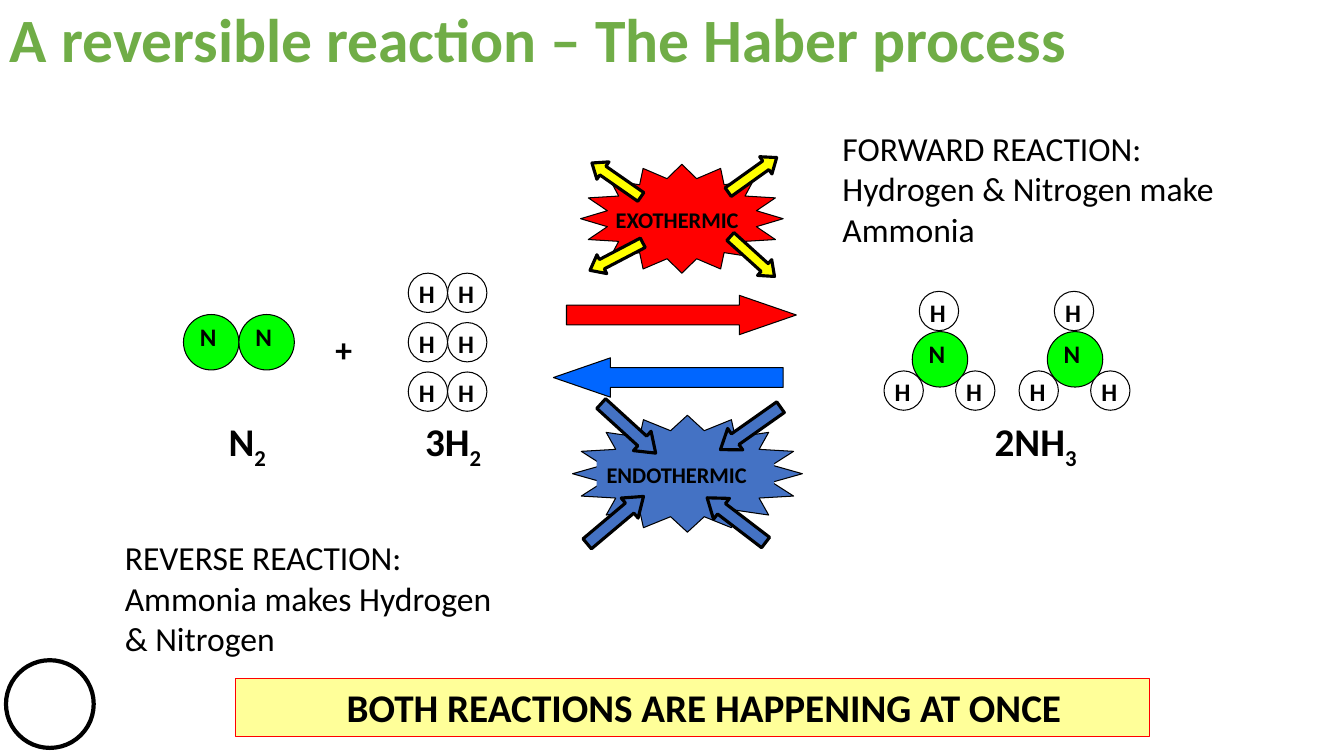
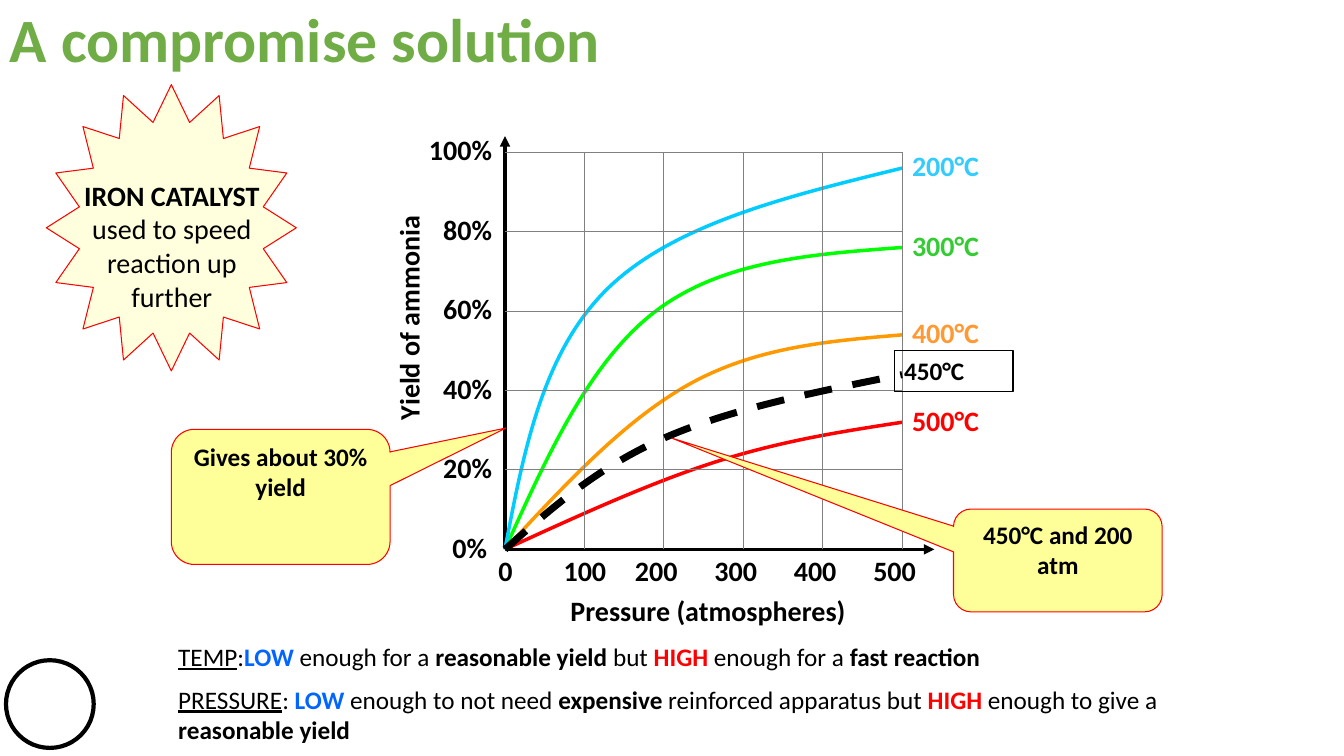
from lxml.etree import SubElement
from pptx import Presentation
from pptx.dml.color import RGBColor
from pptx.enum.dml import MSO_LINE
from pptx.enum.shapes import MSO_CONNECTOR, MSO_SHAPE
from pptx.enum.text import MSO_ANCHOR, PP_ALIGN
from pptx.oxml.ns import qn
from pptx.util import Inches, Pt

COLUMNS, ROWS = 40 / 3, 7.5
DECK_WIDTH, DECK_HEIGHT = Inches(COLUMNS), Inches(ROWS)
FONT = "Calibri"
COLORS = {
    "black": "000000", "white": "FFFFFF", "grey": "808080",
    "title": "70AD47", "red": "FF0000", "blue": "0066FF",
    "steel": "4472C4", "yellow": "FFFF00", "note": "FFFF99",
    "cream": "FFFFDD", "nitrogen": "00FF00",
    "curve 200": "00CCFF", "curve 300": "00FF00", "curve 400": "FF9900",
    "label 200": "33CCFF", "label 300": "33CC33", "label 400": "FF9933",
}

PLOT_LEFT, PLOT_BOTTOM, PLOT_SIDE = 5.01, 5.45, 3.94
MAX_PRESSURE, MAX_YIELD = 500, 100
LABEL_HEIGHT, LABEL_RISE = 0.43, 0.24
CURVES = [
    ((190, 60), (500, 76), "curve 300"),
    ((236, 42), (500, 54), "curve 400"),
    ((265, 22), (500, 32), "red"),
    ((131, 66), (500, 96), "curve 200"),
]
CURVE_LABELS = [
    ("200°C", 96, "label 200"),
    ("300°C", 76, "label 300"),
    ("400°C", 54, "label 400"),
    ("500°C", 32, "red"),
]

BOLD = {"bold": True}
UNDERLINED = {"underline": True}
LOW = ("LOW", {"bold": True, "color": "blue"})
HIGH = ("HIGH", {"bold": True, "color": "red"})
SUBSCRIPT = {"baseline": -25000}

ATOMS = {
    "N": {"side": 0.55, "fill": "nitrogen", "insets": (0, 0, 0.06, 0.11)},
    "H": {"side": 0.39, "fill": "white", "insets": (0, 0.02, 0.02, 0)},
}
AMMONIA_HYDROGENS = [(-0.28, 0.39), (0.43, 0.39), (0.07, -0.4)]


def col(count):
    return int(DECK_WIDTH * count / COLUMNS)


def row(count):
    return int(DECK_HEIGHT * count / ROWS)


def place(area):
    left, top, width, height = area
    return col(left), row(top), col(width), row(height)


def rgb(name):
    return RGBColor.from_string(COLORS[name])


def write(box, text, size=18, bold=False, color="black", align=PP_ALIGN.LEFT,
          anchor=MSO_ANCHOR.TOP, wrap=True, insets=(0.1, 0.05, 0.1, 0.05),
          gap=9, line_spacing=None):
    frame = box.text_frame
    frame.word_wrap = wrap
    frame.vertical_anchor = anchor
    frame.margin_left, frame.margin_top = col(insets[0]), row(insets[1])
    frame.margin_right, frame.margin_bottom = col(insets[2]), row(insets[3])
    paragraphs = [[(text, {})]] if isinstance(text, str) else text
    for index, spans in enumerate(paragraphs):
        para = frame.add_paragraph() if index else frame.paragraphs[0]
        para.alignment = align
        if index:
            para.space_before = Pt(gap)
        if line_spacing:
            para.line_spacing = line_spacing
        for words, style in spans:
            span = para.add_run()
            span.text = words
            span.font.name = FONT
            span.font.size = Pt(size)
            span.font.bold = style.get("bold", bold)
            span.font.underline = style.get("underline", False)
            span.font.color.rgb = rgb(style.get("color", color))
            if "baseline" in style:
                span.font._element.set("baseline", str(style["baseline"]))


def add_text(page, area, text, **text_format):
    box = page.shapes.add_textbox(*place(area))
    write(box, text, **text_format)
    return box


def add_box(page, kind, area, fill=None, line="black", weight=0.75,
            rotation=0, adjustments=()):
    box = page.shapes.add_shape(kind, *place(area))
    box.shadow.inherit = False
    box.rotation = rotation
    for index, value in enumerate(adjustments):
        box.adjustments[index] = value
    if fill:
        box.fill.solid()
        box.fill.fore_color.rgb = rgb(fill)
    else:
        box.fill.background()
    if line:
        box.line.color.rgb = rgb(line)
        box.line.width = Pt(weight)
    else:
        box.line.fill.background()
    return box


def add_line(page, start, end, color, weight, arrow=False):
    line = page.shapes.add_connector(
        MSO_CONNECTOR.STRAIGHT,
        col(start[0]), row(start[1]), col(end[0]), row(end[1]))
    line.line.color.rgb = rgb(color)
    line.line.width = Pt(weight)
    if arrow:
        SubElement(line.line._get_or_add_ln(), qn("a:tailEnd"), type="triangle")
    SubElement(line._element.spPr, qn("a:effectLst"))


def add_page(deck, title):
    page = deck.slides.add_slide(deck.slide_layouts[6])
    add_box(page, MSO_SHAPE.OVAL, (0.06, 6.55, 0.87, 0.87), "white", weight=3)
    add_text(page, (0, -0.2, 11.53, 1.25), title, size=44, bold=True,
             color="title", anchor=MSO_ANCHOR.MIDDLE, line_spacing=0.9)
    return page


def add_atom(page, symbol, left, top):
    atom = ATOMS[symbol]
    box = add_box(page, MSO_SHAPE.OVAL,
                  (left, top, atom["side"], atom["side"]), atom["fill"])
    write(box, symbol, bold=True, align=PP_ALIGN.CENTER, wrap=False,
          anchor=MSO_ANCHOR.MIDDLE, insets=atom["insets"])


def add_pair(page, symbol, left, top):
    for index in range(2):
        add_atom(page, symbol, left + index * ATOMS[symbol]["side"], top)


def add_ammonia(page, left, top):
    add_atom(page, "N", left, top)
    for across, down in AMMONIA_HYDROGENS:
        add_atom(page, "H", left + across, top + down)


def add_burst(page, star, label, text, fill, label_fill, arrow_fill,
              arrow_size, head, arrows):
    add_box(page, MSO_SHAPE.STAR_16_POINT, star, fill)
    box = add_box(page, MSO_SHAPE.RECTANGLE, label, label_fill, line=None)
    write(box, text, size=16, bold=True)
    for left, top, rotation in arrows:
        add_box(page, MSO_SHAPE.RIGHT_ARROW, (left, top, *arrow_size),
                arrow_fill, weight=2.25, rotation=rotation,
                adjustments=(0.5, head))


def add_callout(page, area, text, adjustments):
    box = add_box(page, MSO_SHAPE.ROUNDED_RECTANGULAR_CALLOUT, area, "note",
                  "red", adjustments=adjustments)
    write(box, text, bold=True, align=PP_ALIGN.CENTER)


def plot_point(pressure, percent):
    return (PLOT_LEFT + PLOT_SIDE * pressure / MAX_PRESSURE,
            PLOT_BOTTOM - PLOT_SIDE * percent / MAX_YIELD)


def halfway(first, second):
    return tuple((a + b) / 2 for a, b in zip(first, second))


def curve_points(middle, end):
    start = (0, 0)
    before = tuple(m - e / 6 for m, e in zip(middle, end))
    after = tuple(m + e / 6 for m, e in zip(middle, end))
    return [start, halfway(start, before), before, middle,
            after, halfway(after, end), end]


def bend(curve):
    outline = next(curve._element.iter(qn("a:path")))
    segments = outline.findall(qn("a:lnTo"))
    for index in range(0, len(segments), 3):
        arc = SubElement(outline, qn("a:cubicBezTo"))
        for segment in segments[index:index + 3]:
            arc.append(segment[0])
            outline.remove(segment)


def add_curve(page, middle, end, color, weight=2.5, dash=None):
    points = [(col(x), row(y)) for x, y in
              (plot_point(*point) for point in curve_points(middle, end))]
    builder = page.shapes.build_freeform(*points[0])
    builder.add_line_segments(points[1:], close=False)
    curve = builder.convert_to_shape()
    bend(curve)
    curve.shadow.inherit = False
    curve.fill.background()
    curve.line.color.rgb = rgb(color)
    curve.line.width = Pt(weight)
    if dash:
        curve.line.dash_style = dash


def add_plot(page):
    label = {"size": 20, "bold": True}
    origin = plot_point(0, 0)
    for end in ((PLOT_LEFT, 1.35), (9.27, PLOT_BOTTOM)):
        add_line(page, origin, end, "black", 2.5, arrow=True)
    for curve in CURVES:
        add_curve(page, *curve)
    for pressure in range(0, MAX_PRESSURE + 1, 100):
        x, bottom = plot_point(pressure, 0)
        if pressure:
            add_line(page, (x, bottom), plot_point(pressure, MAX_YIELD), "grey", 0.75)
        nudge = 0.08 if pressure > 100 else 0
        add_text(page, (x - 0.39 - nudge, bottom - 0.01, 0.79, LABEL_HEIGHT),
                 str(pressure), align=PP_ALIGN.CENTER, **label)
    for percent in range(0, MAX_YIELD + 1, 20):
        left, y = plot_point(0, percent)
        if percent:
            add_line(page, (left, y), plot_point(MAX_PRESSURE, percent), "grey", 0.75)
        nudge = 0 if percent else 0.05
        add_text(page, (left - 0.97 - nudge, y - LABEL_RISE, 0.94, LABEL_HEIGHT),
                 f"{percent}%", align=PP_ALIGN.RIGHT, **label)
    for text, percent, color in CURVE_LABELS:
        x, y = plot_point(MAX_PRESSURE, percent)
        add_text(page, (x, y - LABEL_RISE, 1.02, LABEL_HEIGHT), text,
                 color=color, **label)
    add_text(page, (5.56, 5.84, 3.39, LABEL_HEIGHT), "Pressure (atmospheres)", **label)
    axis_title = add_text(page, (2.71, 2.71, 2.68, LABEL_HEIGHT),
                          "Yield of ammonia", **label)
    axis_title.rotation = 270
    add_curve(page, (200, 28), (500, 44), "black", 5, MSO_LINE.DASH)


def build_reaction(deck):
    page = add_page(deck, "A reversible reaction – The Haber process")
    for left in (9.05, 10.39):
        add_ammonia(page, left, 3.29)
    add_pair(page, "N", 1.82, 3.12)
    for index in range(3):
        add_pair(page, "H", 4.05, 2.71 + index * 0.49)
    add_text(page, (8.26, 1.22, 4.13, 1.31),
             "FORWARD REACTION: Hydrogen & Nitrogen make Ammonia", size=24)
    add_text(page, (1.14, 5.28, 3.84, 1.31),
             "REVERSE REACTION: Ammonia makes Hydrogen & Nitrogen", size=24)
    add_burst(page, (5.76, 1.63, 2.01, 1.08), (6.01, 2, 1.63, 0.39),
              "EXOTHERMIC", "red", None, "yellow", (0.59, 0.21), 0.63,
              [(5.82, 2.44, 152.4), (7.17, 2.44, 42.1),
               (5.82, 1.68, 214.8), (7.17, 1.63, 324.5)])
    add_burst(page, (5.68, 4.12, 2.28, 1.16), (5.92, 4.53, 1.76, 0.37),
              "ENDOTHERMIC", "steel", "steel", "steel", (0.73, 0.26), 0.69,
              [(6.94, 5.03, 217.4), (5.74, 5.03, 319.9),
               (5.87, 4.12, 42.3), (7.08, 4.12, 144.8)])
    banner = add_box(page, MSO_SHAPE.RECTANGLE, (2.34, 6.73, 9.06, 0.58),
                     "note", "red")
    write(banner, "BOTH REACTIONS ARE HAPPENING AT ONCE", size=28, bold=True,
          insets=(1.1, 0.05, 0.1, 0.05))
    for left, top, rotation, fill in ((5.62, 2.93, 0, "red"),
                                      (5.49, 3.55, 180, "blue")):
        add_box(page, MSO_SHAPE.RIGHT_ARROW, (left, top, 2.28, 0.39), fill,
                rotation=rotation, adjustments=(0.5, 1.45))
    add_text(page, (3.23, 3.21, 0.81, 0.5), "+", size=24, bold=True)
    for left, formula, count in ((2.17, "N", "2"), (4.12, "3H", "2"),
                                 (9.77, "2NH", "3")):
        add_text(page, (left, 4.09, 1.3, 0.57),
                 [[(formula, {}), (count, SUBSCRIPT)]], size=28, bold=True)


def build_compromise(deck):
    page = add_page(deck, "A compromise solution")
    add_plot(page)
    add_callout(page, (9.46, 5.05, 2.07, 1.02), "450°C and 200 atm",
                (-1.85, -1.19, 0.17))
    add_text(page, (1.67, 6.31, 10, 1.16), [
        [("TEMP", UNDERLINED), (":", {}), LOW, (" enough for a ", {}),
         ("reasonable yield", BOLD), (" but ", {}), HIGH,
         (" enough for a ", {}), ("fast reaction", BOLD)],
        [("PRESSURE", UNDERLINED), (": ", {}), LOW,
         (" enough to not need ", {}), ("expensive", BOLD),
         (" reinforced apparatus but ", {}), HIGH,
         (" enough to give a ", {}), ("reasonable yield", BOLD)],
    ])
    chosen = add_box(page, MSO_SHAPE.RECTANGLE, (8.87, 3.48, 1.18, 0.4))
    write(chosen, "450°C", bold=True)
    add_box(page, MSO_SHAPE.STAR_16_POINT, (0.46, 0.84, 2.48, 2.84), "cream", "red")
    add_text(page, (0.68, 1.72, 2.05, 1.45),
             [[("IRON CATALYST", BOLD), (" used to speed reaction up further", {})]],
             size=20, align=PP_ALIGN.CENTER)
    add_callout(page, (1.7, 4.26, 2.17, 1.34), "Gives about 30% yield",
                (1.03, -0.51, 0.17))


def main():
    deck = Presentation()
    deck.slide_width, deck.slide_height = DECK_WIDTH, DECK_HEIGHT
    build_reaction(deck)
    build_compromise(deck)
    deck.save("out.pptx")


if __name__ == "__main__":
    main()
